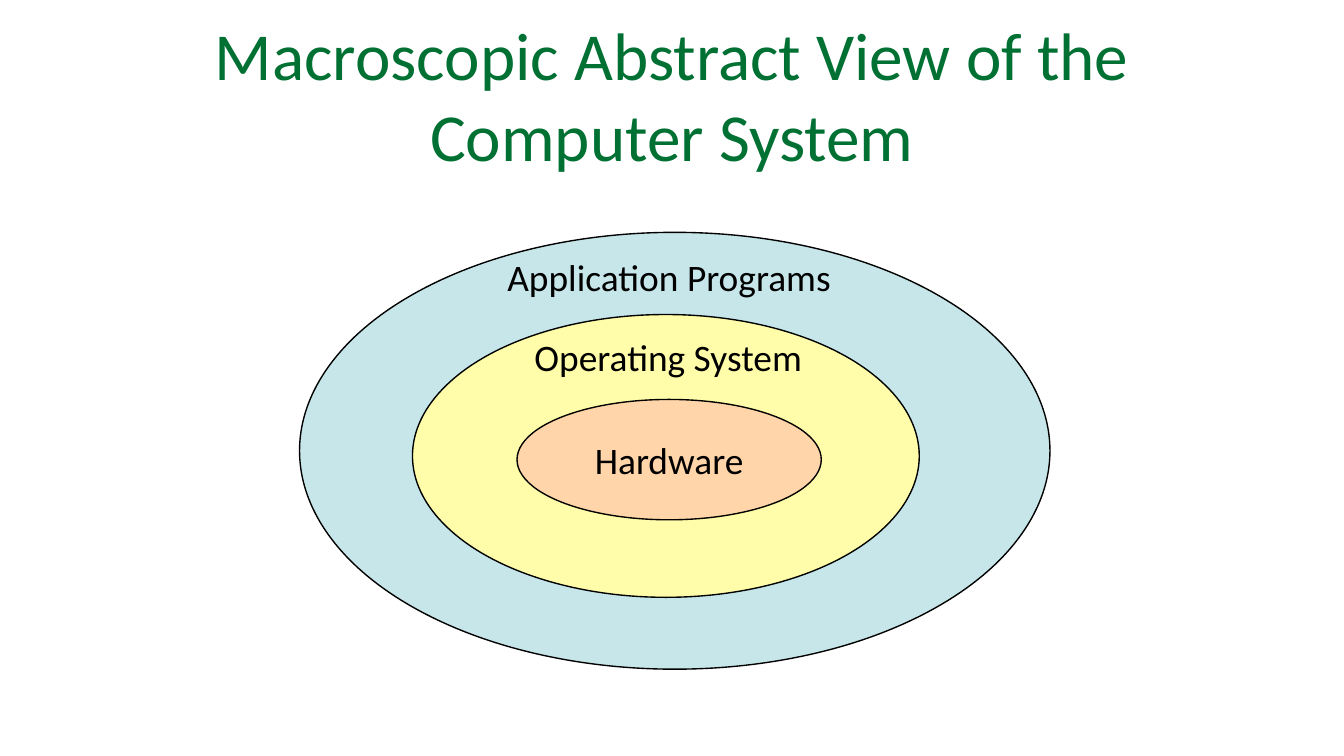
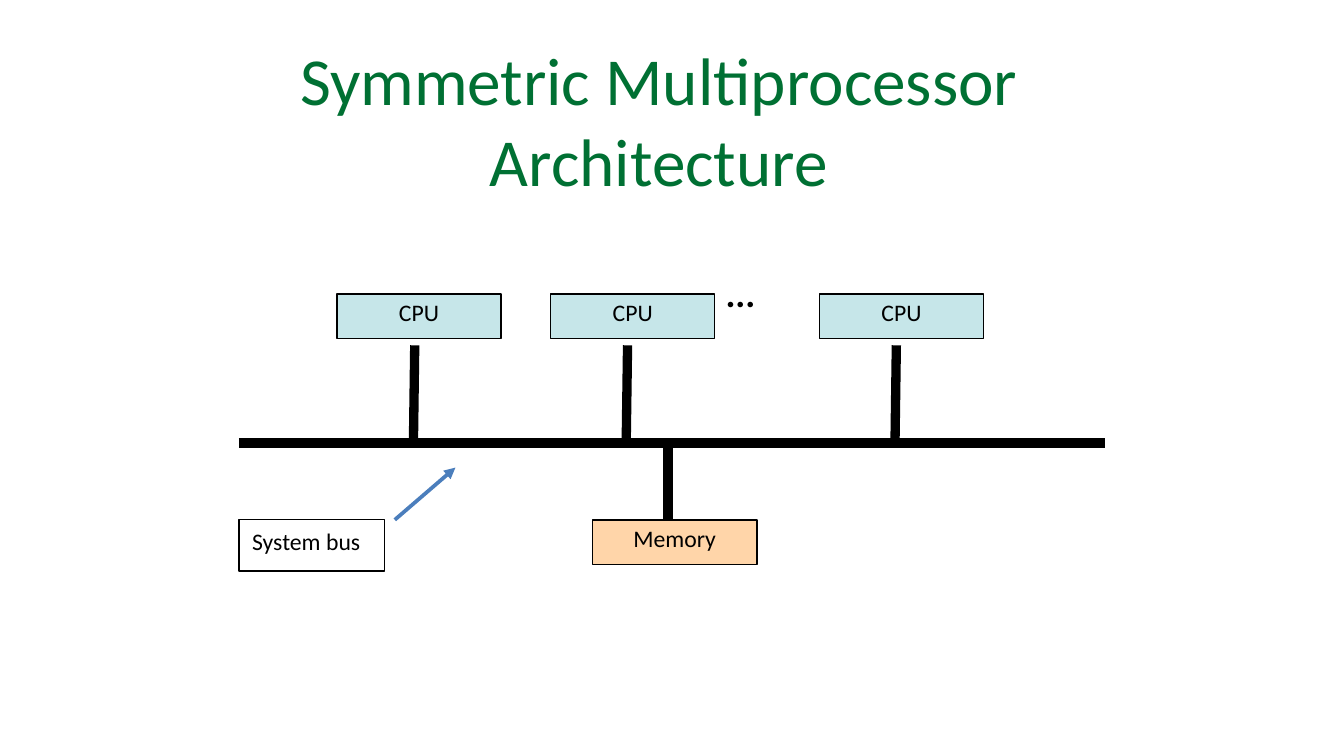
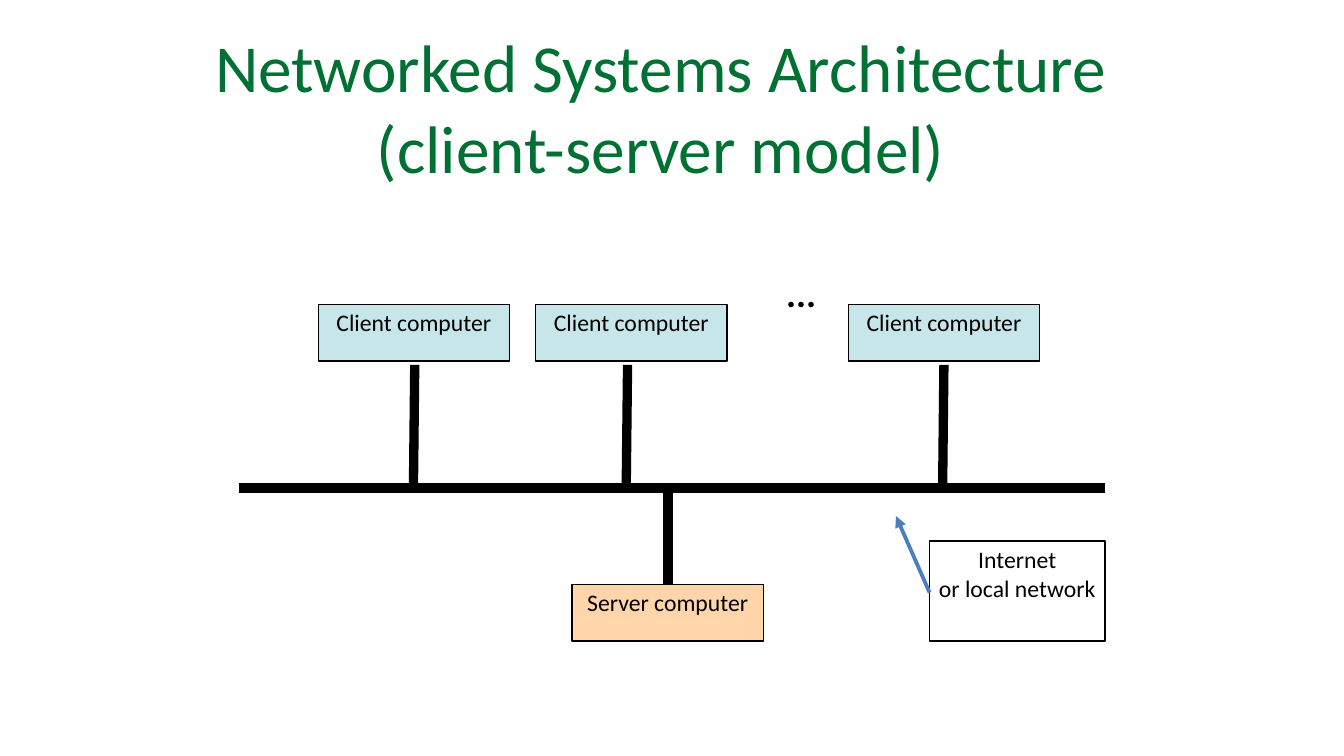
from dataclasses import dataclass
from typing import Optional

from lxml.etree import SubElement
from pptx import Presentation
from pptx.dml.color import RGBColor
from pptx.enum.shapes import MSO_CONNECTOR, MSO_SHAPE
from pptx.enum.text import MSO_ANCHOR, MSO_AUTO_SIZE, PP_ALIGN
from pptx.oxml.ns import qn
from pptx.util import Pt

GREEN = RGBColor(0x00, 0x70, 0x33)
BLACK = RGBColor(0x00, 0x00, 0x00)
BLUE = RGBColor(0x4B, 0x7E, 0xBC)
AQUA = RGBColor(0xC6, 0xE6, 0xE9)
YELLOW = RGBColor(0xFF, 0xFD, 0xA9)
PEACH = RGBColor(0xFF, 0xD5, 0xA9)
FONT = "Calibri"
TITLE_SIZE, LABEL_SIZE, BOX_SIZE = 36, 20, 12.7
TITLE_MARGIN, BOX_MARGIN = 10, 2
BUS_LEFT, BUS_RIGHT, STEM_X = 128, 592, 357.9
STUB_SLANT = 0.7


@dataclass
class Rect:
    x: float
    y: float
    w: float
    h: float

    def lengths(self):
        return Pt(self.x), Pt(self.y), Pt(self.w), Pt(self.h)


@dataclass
class Node:
    rect: Rect
    text: str = ""
    fill: Optional[RGBColor] = None
    shape: MSO_SHAPE = MSO_SHAPE.RECTANGLE
    line: float = 0.75
    align: PP_ALIGN = PP_ALIGN.CENTER
    margins: tuple = (BOX_MARGIN, BOX_MARGIN)
    wrap: bool = True


@dataclass
class Label:
    rect: Rect
    text: str
    bold: bool = False
    anchor: MSO_ANCHOR = MSO_ANCHOR.TOP


@dataclass
class Line:
    x1: float
    y1: float
    x2: float
    y2: float
    width: float = 5
    color: RGBColor = BLACK
    arrow: bool = False


@dataclass
class BusDiagram:
    title: str
    title_rect: Rect
    unit_text: str
    unit_xs: tuple
    unit_y: float
    unit_w: float
    unit_h: float
    stub_xs: tuple
    stub_top: float
    bus_y: float
    hub_text: str
    hub_x: float
    hub_y: float
    dots: Rect
    note: Node
    pointer: Line


def write(sp, text: str, size: float, color: RGBColor = BLACK,
          align: PP_ALIGN = PP_ALIGN.CENTER, bold: bool = False,
          margins: tuple = (BOX_MARGIN, BOX_MARGIN), wrap: bool = True,
          anchor: MSO_ANCHOR = MSO_ANCHOR.TOP) -> None:
    tf = sp.text_frame
    tf.text = text
    tf.auto_size = MSO_AUTO_SIZE.NONE
    tf.word_wrap = wrap
    tf.vertical_anchor = anchor
    tf.margin_left = tf.margin_right = Pt(margins[0])
    tf.margin_top = tf.margin_bottom = Pt(margins[1])
    for p in tf.paragraphs:
        p.alignment = align
        for r in p.runs:
            r.font.name = FONT
            r.font.size = Pt(size)
            r.font.bold = bold
            r.font.color.rgb = color


def add_slide(prs, title: str, rect: Rect):
    s = prs.slides.add_slide(prs.slide_layouts[5])
    sp = s.shapes.title
    sp.left, sp.top, sp.width, sp.height = rect.lengths()
    write(sp, title, TITLE_SIZE, GREEN, margins=(TITLE_MARGIN, 3.6),
          anchor=MSO_ANCHOR.MIDDLE)
    return s


def add_node(s, node: Node) -> None:
    sp = s.shapes.add_shape(node.shape, *node.rect.lengths())
    sp.shadow.inherit = False
    if node.fill is None:
        sp.fill.background()
    else:
        sp.fill.solid()
        sp.fill.fore_color.rgb = node.fill
    sp.line.color.rgb = BLACK
    sp.line.width = Pt(node.line)
    if node.text:
        write(sp, node.text, BOX_SIZE, align=node.align,
              margins=node.margins, wrap=node.wrap)


def add_label(s, label: Label) -> None:
    sp = s.shapes.add_textbox(*label.rect.lengths())
    write(sp, label.text, LABEL_SIZE, bold=label.bold, wrap=False,
          anchor=label.anchor)


def add_line(s, line: Line) -> None:
    sp = s.shapes.add_connector(MSO_CONNECTOR.STRAIGHT, Pt(line.x1),
                                Pt(line.y1), Pt(line.x2), Pt(line.y2))
    sp.line.color.rgb = line.color
    sp.line.width = Pt(line.width)
    sp_pr = sp._element.spPr
    if line.arrow:
        SubElement(sp_pr.find(qn("a:ln")), qn("a:tailEnd"), type="triangle")
    SubElement(sp_pr, qn("a:effectLst"))


def add_layers_slide(prs) -> None:
    s = add_slide(prs, "Macroscopic Abstract View of the Computer System",
                  Rect(36, 6, 648, 89))
    layers = [
        (Rect(160.5, 124.5, 402, 234), AQUA),
        (Rect(221, 168.5, 271.5, 151.5), YELLOW),
        (Rect(277, 214, 163, 64.5), PEACH),
    ]
    for rect, fill in layers:
        add_node(s, Node(rect, fill=fill, shape=MSO_SHAPE.OVAL))
    labels = [
        Label(Rect(312, 232.5, 93, 27.5), "Hardware",
              anchor=MSO_ANCHOR.MIDDLE),
        Label(Rect(283.5, 177, 149, 29), "Operating System"),
        Label(Rect(268.5, 134, 180, 29), "Application Programs"),
    ]
    for label in labels:
        add_label(s, label)


def add_bus_slide(prs, d: BusDiagram) -> None:
    s = add_slide(prs, d.title, d.title_rect)
    stub_end = d.bus_y - 1.5
    add_line(s, Line(BUS_LEFT, d.bus_y, BUS_RIGHT, d.bus_y, 5.5))
    for unit_x, stub_x in zip(d.unit_xs, d.stub_xs):
        rect = Rect(unit_x, d.unit_y, d.unit_w, d.unit_h)
        add_node(s, Node(rect, d.unit_text, AQUA))
        add_line(s, Line(stub_x, stub_end, stub_x + STUB_SLANT, d.stub_top))
    hub = Rect(d.hub_x, d.hub_y, d.unit_w, d.unit_h)
    add_node(s, Node(hub, d.hub_text, PEACH))
    add_line(s, Line(STEM_X, d.hub_y, STEM_X, stub_end))
    add_label(s, Label(d.dots, "...", bold=True))
    add_node(s, d.note)
    add_line(s, d.pointer)


BUS_DIAGRAMS = [
    BusDiagram(
        title="Symmetric Multiprocessor Architecture",
        title_rect=Rect(58.5, 19.5, 589, 88.5),
        unit_text="CPU", unit_xs=(180.5, 295, 439),
        unit_y=157.5, unit_w=88, unit_h=24,
        stub_xs=(221.5, 335.5, 479.5), stub_top=185, bus_y=237.5,
        hub_text="Memory", hub_x=317.5, hub_y=278.5,
        dots=Rect(386, 142.5, 21.5, 34.5),
        note=Node(Rect(128, 278.5, 78, 27.5), "System bus",
                  align=PP_ALIGN.LEFT, margins=(7.2, 3.6), wrap=False),
        pointer=Line(211.5, 278.5, 244, 250.5, 2, BLUE, True),
    ),
    BusDiagram(
        title="Networked Systems Architecture\v(client-server model)",
        title_rect=Rect(71.5, 20, 565, 74),
        unit_text="Client computer", unit_xs=(170.5, 287, 454.5),
        unit_y=163, unit_w=102.5, unit_h=30.5,
        stub_xs=(221.5, 335.5, 505), stub_top=195.5, bus_y=261.5,
        hub_text="Server computer", hub_x=306.5, hub_y=313,
        dots=Rect(418.5, 142.5, 21.5, 44),
        note=Node(Rect(498, 290, 94, 53.5), "Internet\nor local network",
                  line=1, wrap=False),
        pointer=Line(498, 317.5, 480, 276.5, 2, BLUE, True),
    ),
]


def main() -> None:
    prs = Presentation()
    prs.slide_width, prs.slide_height = Pt(720), Pt(405)
    add_layers_slide(prs)
    for diagram in BUS_DIAGRAMS:
        add_bus_slide(prs, diagram)
    prs.save("out.pptx")


if __name__ == "__main__":
    main()
